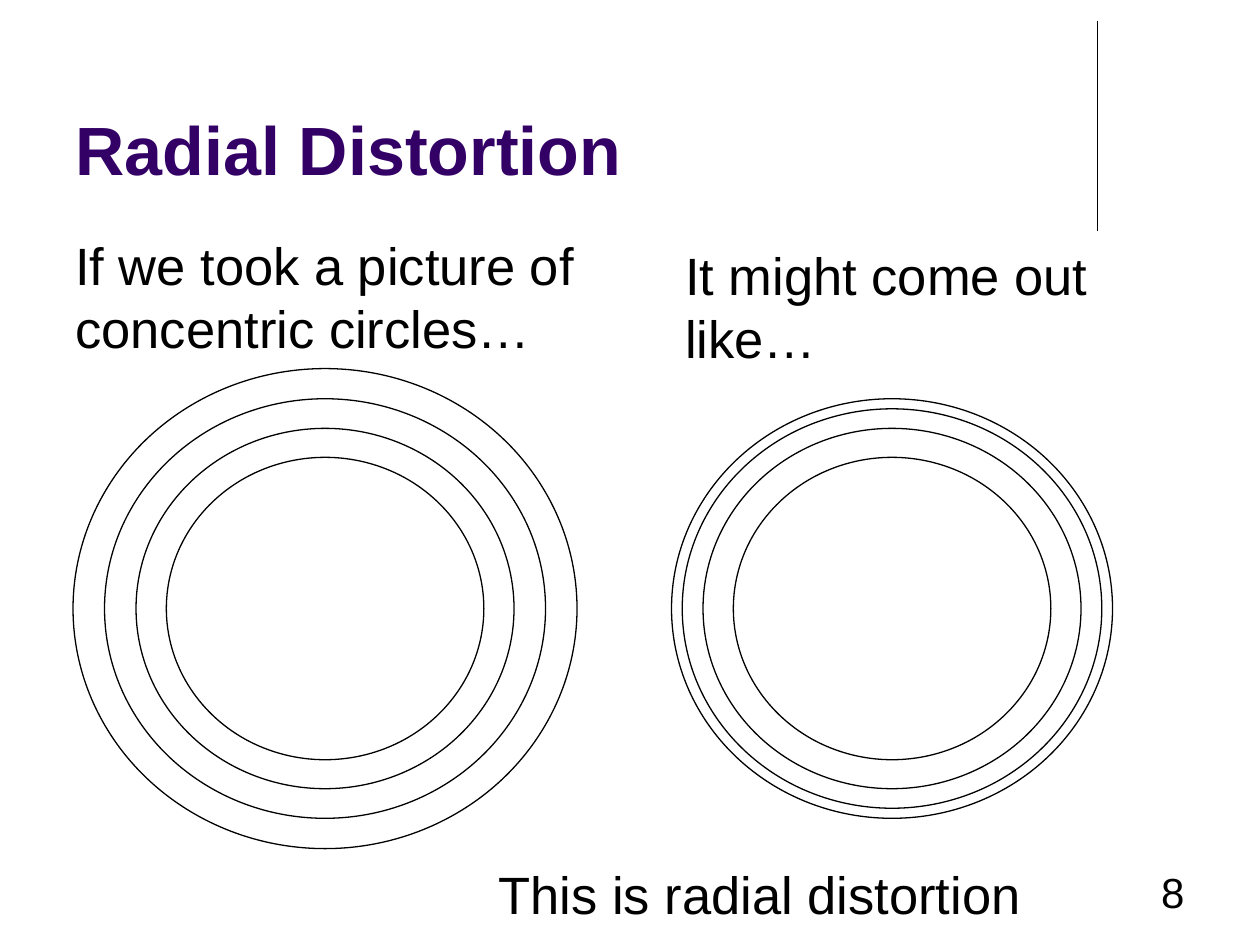
from pptx import Presentation
from pptx.dml.color import RGBColor
from pptx.enum import shapes, text
from pptx.oxml.ns import qn
from pptx.util import Inches, Pt
from lxml import etree

BLACK = RGBColor(0x00, 0x00, 0x00)
PURPLE = RGBColor(0x33, 0x00, 0x66)
FONT = "Arial"


def write(frame, content, size=30, color=BLACK, bold=False,
          align=text.PP_ALIGN.LEFT, anchor=text.MSO_ANCHOR.TOP, top_inset=0.05):
    frame.word_wrap = True
    frame.vertical_anchor = anchor
    frame.margin_top = Inches(top_inset)
    paragraph = frame.paragraphs[0]
    paragraph.alignment = align
    run = paragraph.add_run()
    run.text = content
    font = run.font
    font.name, font.size, font.bold = FONT, Pt(size), bold
    font.color.rgb = color


class SlideBuilder:
    """Holds the current slide and its outline style."""

    def __init__(self, slide, line_color=BLACK, line_width=0.75):
        self.slide = slide
        self.line_color = line_color
        self.line_width = Pt(line_width)

    def outline(self, shape):
        shape.line.color.rgb = self.line_color
        shape.line.width = self.line_width

    def label(self, content, left, top, width, height, **style):
        box = self.slide.shapes.add_textbox(
            Inches(left), Inches(top), Inches(width), Inches(height))
        write(box.text_frame, content, **style)

    def rule(self, x1, y1, x2, y2):
        line = self.slide.shapes.add_connector(
            shapes.MSO_CONNECTOR.STRAIGHT,
            Inches(x1), Inches(y1), Inches(x2), Inches(y2))
        self.outline(line)
        etree.SubElement(line._element.spPr, qn("a:effectLst"))

    def rings(self, center_x, center_y, sizes):
        for width, height in sizes:
            ring = self.slide.shapes.add_shape(
                shapes.MSO_SHAPE.OVAL,
                Inches(center_x - width / 2), Inches(center_y - height / 2),
                Inches(width), Inches(height))
            ring.shadow.inherit = False
            ring.fill.background()
            self.outline(ring)


def main():
    deck = Presentation()
    deck.slide_width, deck.slide_height = Inches(10), Inches(7.5)
    builder = SlideBuilder(deck.slides.add_slide(deck.slide_layouts[6]))

    # Title and corner rule
    builder.rule(8.71, 0.17, 8.71, 1.83)
    builder.label("Radial Distortion", 0.5, 0.13, 8.25, 1.42, size=39,
                  color=PURPLE, bold=True, anchor=text.MSO_ANCHOR.BOTTOM)

    # Evenly spaced circles, and the same circles squeezed at the edge
    center_y = 4.83
    shared_rings = [(3.5, 3.33), (3, 2.86), (2.52, 2.4)]
    builder.rings(2.58, center_y, [(4, 3.81)] + shared_rings)
    builder.rings(7.08, center_y, [(3.33, 3.17)] + shared_rings)

    # Captions
    captions = [
        ("If we took a picture of concentric circles…", 0.5, 1.75, 4.82),
        ("It might come out like…", 5.34, 1.83, 4.82),
        ("This is radial distortion", 3.86, 6.74, 1.23),
    ]
    for caption, left, top, height in captions:
        builder.label(caption, left, top, 4.5, height, top_inset=0.1)

    # Slide number
    builder.label("8", 7.17, 6.83, 2.33, 0.5, size=24,
                  align=text.PP_ALIGN.RIGHT)

    deck.save("out.pptx")


if __name__ == "__main__":
    main()
